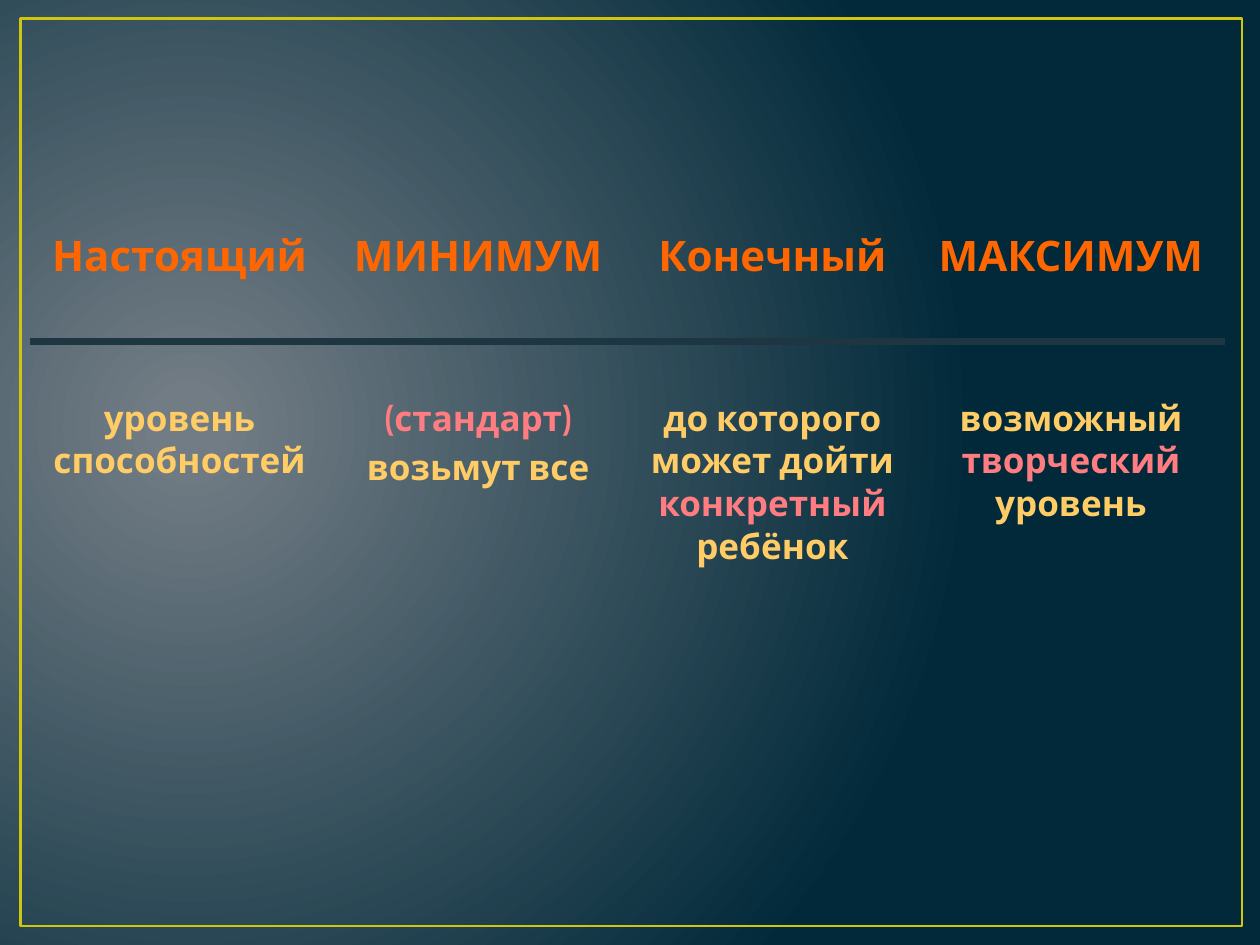
import dataclasses

import lxml.etree
import pptx
import pptx.dml.color
import pptx.enum.shapes
import pptx.enum.text
import pptx.oxml
import pptx.oxml.ns
import pptx.slide
import pptx.table
import pptx.util

Cm = pptx.util.Cm
Pt = pptx.util.Pt


@dataclasses.dataclass(frozen=True)
class Theme:
    font: str = "Cabin"
    heading: str = "FF6600"
    body: str = "FFCC66"
    accent: str = "FF7C80"
    rule: str = "1D3641"
    frame: str = "CFC60D"
    glow: str = "717C84"
    night: str = "01293A"
    heading_size: int = 24
    body_size: int = 20
    rule_width: float = 4.5
    frame_width: float = 1.5


@dataclasses.dataclass(frozen=True)
class Phrase:
    text: str
    color: str


@dataclasses.dataclass(frozen=True)
class Level:
    heading: str
    width: float
    paragraphs: list[list[Phrase]]


THEME = Theme()
PLAIN, ACCENT = THEME.body, THEME.accent
LEVELS = [
    Level("Настоящий", 6.02, [[Phrase("уровень способностей", PLAIN)]]),
    Level("МИНИМУМ", 6.02, [[Phrase("(стандарт)", ACCENT)], [Phrase("возьмут все", PLAIN)]]),
    Level("Конечный", 5.84, [[Phrase("до которого может дойти ", PLAIN),
                              Phrase("конкретный ", ACCENT), Phrase("ребёнок", PLAIN)]]),
    Level("МАКСИМУМ", 6.2, [[Phrase("возможный ", PLAIN),
                             Phrase("творческий ", ACCENT), Phrase("уровень", PLAIN)]]),
]
ROW_HEIGHTS = (2.36, 10.67)
BODY_TOP_MARGIN = 1.13
NO_TABLE_STYLE = "{2D5ABB26-0587-4C30-8999-92F81FD0307C}"


def rgb(color: str) -> pptx.dml.color.RGBColor:
    return pptx.dml.color.RGBColor.from_string(color)


def paint_background(slide: pptx.slide.Slide) -> None:
    """Fill the background with a circular glow left of the centre."""
    fill = slide.background.fill
    fill.gradient()
    for stop, color, position in zip(fill.gradient_stops, (THEME.glow, THEME.night), (0.04, 1)):
        stop.color.rgb = rgb(color)
        stop.position = position
    gradient = slide.background._cSld.find(".//" + pptx.oxml.ns.qn("a:gradFill"))
    gradient.remove(gradient.find(pptx.oxml.ns.qn("a:lin")))
    gradient.append(pptx.oxml.parse_xml(
        f'<a:path {pptx.oxml.ns.nsdecls("a")} path="circle">'
        '<a:fillToRect l="15000" t="50000" r="85000" b="60000"/></a:path>'))


def draw_frame(slide: pptx.slide.Slide) -> None:
    frame = slide.shapes.add_shape(
        pptx.enum.shapes.MSO_SHAPE.RECTANGLE, Cm(0.41), Cm(0.38), Cm(24.63), Cm(18.29))
    frame.shadow.inherit = False
    frame.fill.background()
    frame.line.color.rgb = rgb(THEME.frame)
    frame.line.width = Pt(THEME.frame_width)


def write_cell(cell: pptx.table._Cell, paragraphs: list[list[Phrase]], size: int) -> None:
    cell.fill.background()
    for index, phrases in enumerate(paragraphs):
        paragraph = cell.text_frame.add_paragraph() if index else cell.text_frame.paragraphs[0]
        paragraph.alignment = pptx.enum.text.PP_ALIGN.CENTER
        if index:
            paragraph.space_before = Pt(size * 0.2)
        for phrase in phrases:
            run = paragraph.add_run()
            run.text = phrase.text
            run.font.color.rgb = rgb(phrase.color)
            for name, value in {"name": THEME.font, "size": Pt(size), "bold": True}.items():
                setattr(run.font, name, value)


def draw_border(cell: pptx.table._Cell, side: str) -> None:
    """Rule one side of a cell: lnT for the top, lnB for the bottom."""
    border = pptx.oxml.parse_xml(
        f'<a:{side} {pptx.oxml.ns.nsdecls("a")} w="{Pt(THEME.rule_width)}">'
        f'<a:solidFill><a:srgbClr val="{THEME.rule}"/></a:solidFill></a:{side}>')
    cell._tc.get_or_add_tcPr().insert(0, border)


def draw_levels(slide: pptx.slide.Slide) -> None:
    width = sum(level.width for level in LEVELS)
    graphic = slide.shapes.add_table(
        len(ROW_HEIGHTS), len(LEVELS), Cm(0.61), Cm(4.52), Cm(width), Cm(sum(ROW_HEIGHTS)))
    table = graphic.table
    table.first_row = table.horz_banding = False
    table._tbl.tblPr.find(pptx.oxml.ns.qn("a:tableStyleId")).text = NO_TABLE_STYLE
    for row, height in zip(table.rows, ROW_HEIGHTS):
        row.height = Cm(height)
    for column, level in enumerate(LEVELS):
        table.columns[column].width = Cm(level.width)
        heading, body = table.cell(0, column), table.cell(1, column)
        write_cell(heading, [[Phrase(level.heading, THEME.heading)]], THEME.heading_size)
        write_cell(body, level.paragraphs, THEME.body_size)
        body.margin_top = Cm(BODY_TOP_MARGIN)
        draw_border(heading, "lnB")
        draw_border(body, "lnT")


def main() -> None:
    presentation = pptx.Presentation()
    presentation.slide_width, presentation.slide_height = Cm(25.4), Cm(19.05)
    slide = presentation.slides.add_slide(presentation.slide_layouts[6])
    paint_background(slide)
    draw_frame(slide)
    draw_levels(slide)
    presentation.save("out.pptx")


if __name__ == "__main__":
    main()
